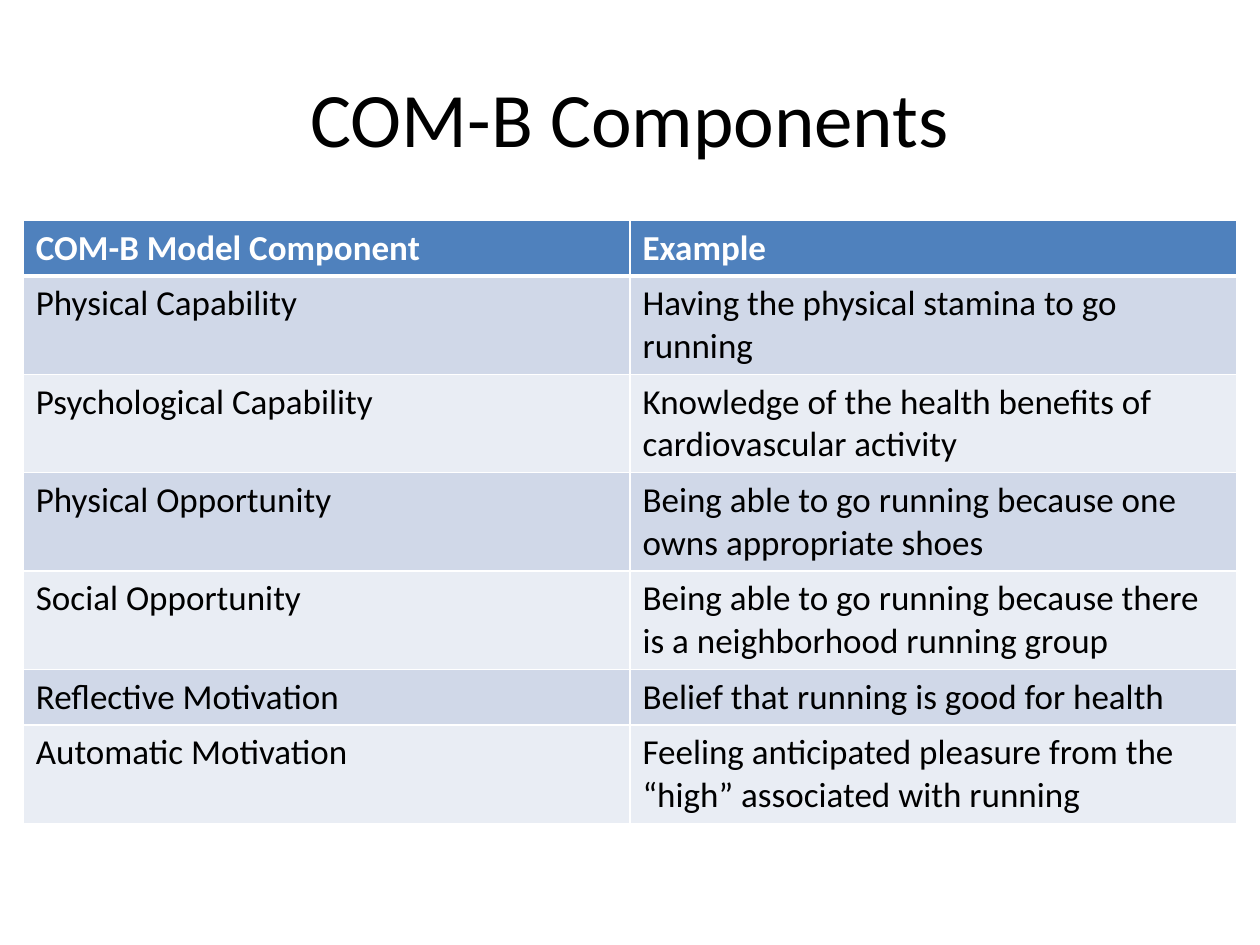
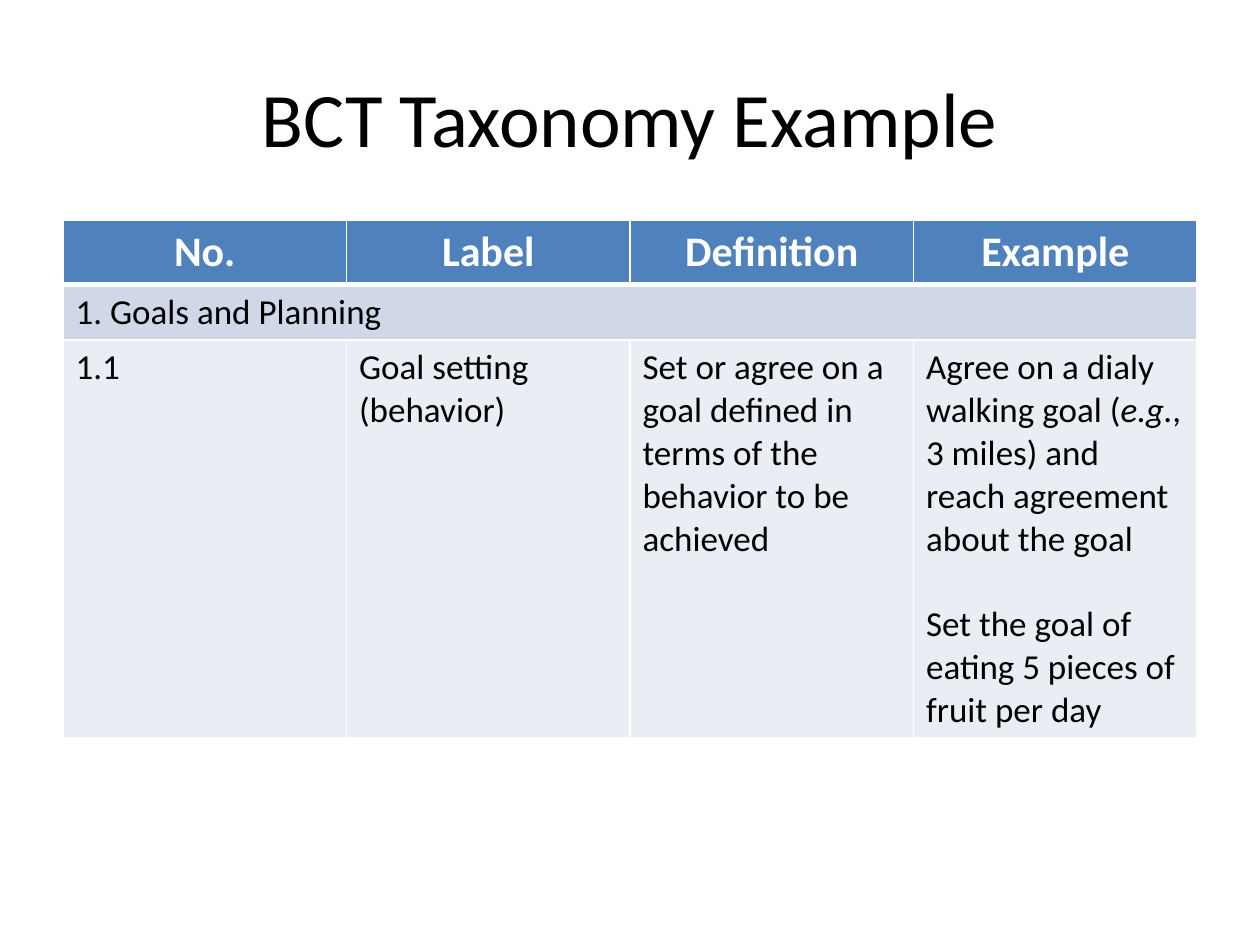
from lxml.etree import SubElement
from pptx import Presentation
from pptx.dml.color import RGBColor
from pptx.enum.text import MSO_ANCHOR, PP_ALIGN
from pptx.oxml.ns import qn
from pptx.util import Inches, Pt

WHITE = RGBColor(0xFF, 0xFF, 0xFF)
BLACK = RGBColor(0x00, 0x00, 0x00)
HEADER_BLUE = RGBColor(0x4F, 0x81, 0xBD)
BANDS = (RGBColor(0xD0, 0xD8, 0xE8), RGBColor(0xE9, 0xED, 0xF4))

# Asterisks enclose italics, a line break starts a paragraph,
# and a row with a single cell spans the whole table.
SLIDES = [
    dict(
        title="COM-B Components",
        width=9.63,
        header_size=20,
        header_align=PP_ALIGN.LEFT,
        rows=[
            ("COM-B Model Component", "Example"),
            ("Physical Capability", "Having the physical stamina to go running"),
            ("Psychological Capability",
             "Knowledge of the health benefits of cardiovascular activity"),
            ("Physical Opportunity",
             "Being able to go running because one owns appropriate shoes"),
            ("Social Opportunity",
             "Being able to go running because there is a neighborhood running group"),
            ("Reflective Motivation", "Belief that running is good for health"),
            ("Automatic Motivation",
             "Feeling anticipated pleasure from the “high” associated with running"),
        ],
    ),
    dict(
        title="BCT Taxonomy Example",
        width=9,
        header_size=24,
        header_align=PP_ALIGN.CENTER,
        rows=[
            ("No.", "Label", "Definition", "Example"),
            ("1. Goals and Planning",),
            ("1.1", "Goal setting (behavior)",
             "Set or agree on a goal defined in terms of the behavior to be achieved",
             "Agree on a dialy walking goal (*e.g., *3 miles) and reach agreement "
             "about the goal\nSet the goal of eating 5 pieces of fruit per day"),
        ],
    ),
]

SLIDE_W, SLIDE_H = 10, 7.5
TITLE_BOX = (0.5, 0.3, 9, 1.25)
TABLE_TOP, ROW_H = 1.75, 0.41
BODY_SIZE, PARAGRAPH_GAP = 20, 24.4
TITLE_FONT = dict(name="Calibri", size=Pt(44))


def set_font(font, color, **values):
    for key, value in values.items():
        setattr(font, key, value)
    font.color.rgb = color


def add_title(s, text):
    sp = s.shapes.title
    for key, value in zip(("left", "top", "width", "height"), TITLE_BOX):
        setattr(sp, key, Inches(value))
    tf = sp.text_frame
    tf.text = text
    tf.vertical_anchor = MSO_ANCHOR.MIDDLE
    p = tf.paragraphs[0]
    p.alignment = PP_ALIGN.CENTER
    set_font(p.runs[0].font, BLACK, **TITLE_FONT)


def set_borders(cell, bottom):
    tc_pr = cell._tc.get_or_add_tcPr()
    for side, width in dict(L=1, R=1, T=1, B=bottom).items():
        ln = SubElement(tc_pr, qn(f"a:ln{side}"), w=str(Pt(width)))
        fill = SubElement(ln, qn("a:solidFill"))
        SubElement(fill, qn("a:srgbClr"), val=str(WHITE))


def write_cell(cell, text, align, color, **font):
    tf = cell.text_frame
    for i, line in enumerate(text.split("\n")):
        p = tf.add_paragraph() if i else tf.paragraphs[0]
        p.alignment = align
        if i:
            p.space_before = Pt(PARAGRAPH_GAP)
        for j, part in enumerate(line.split("*")):
            r = p.add_run()
            r.text = part
            set_font(r.font, color, name="Calibri", italic=j % 2 == 1, **font)


def add_grid(s, width, header_size, header_align, rows):
    n_cols = len(rows[0])
    left = (SLIDE_W - width) / 2
    frame = s.shapes.add_table(len(rows), n_cols, Inches(left), Inches(TABLE_TOP),
                               Inches(width), Inches(ROW_H * len(rows)))
    table = frame.table
    for i, texts in enumerate(rows):
        header = i == 0
        for j in range(n_cols):
            cell = table.cell(i, j)
            set_borders(cell, bottom=3 if header else 1)
            cell.fill.solid()
            cell.fill.fore_color.rgb = HEADER_BLUE if header else BANDS[(i - 1) % 2]
        if len(texts) == 1:
            table.cell(i, 0).merge(table.cell(i, n_cols - 1))
        for j, text in enumerate(texts):
            write_cell(table.cell(i, j), text,
                       align=header_align if header else PP_ALIGN.LEFT,
                       color=WHITE if header else BLACK,
                       size=Pt(header_size if header else BODY_SIZE),
                       bold=header)


def main():
    prs = Presentation()
    prs.slide_width, prs.slide_height = Inches(SLIDE_W), Inches(SLIDE_H)
    title_only = prs.slide_layouts.get_by_name("Title Only")
    for content in SLIDES:
        s = prs.slides.add_slide(title_only)
        add_title(s, content["title"])
        add_grid(s, **{k: v for k, v in content.items() if k != "title"})
    prs.save("out.pptx")


if __name__ == "__main__":
    main()
